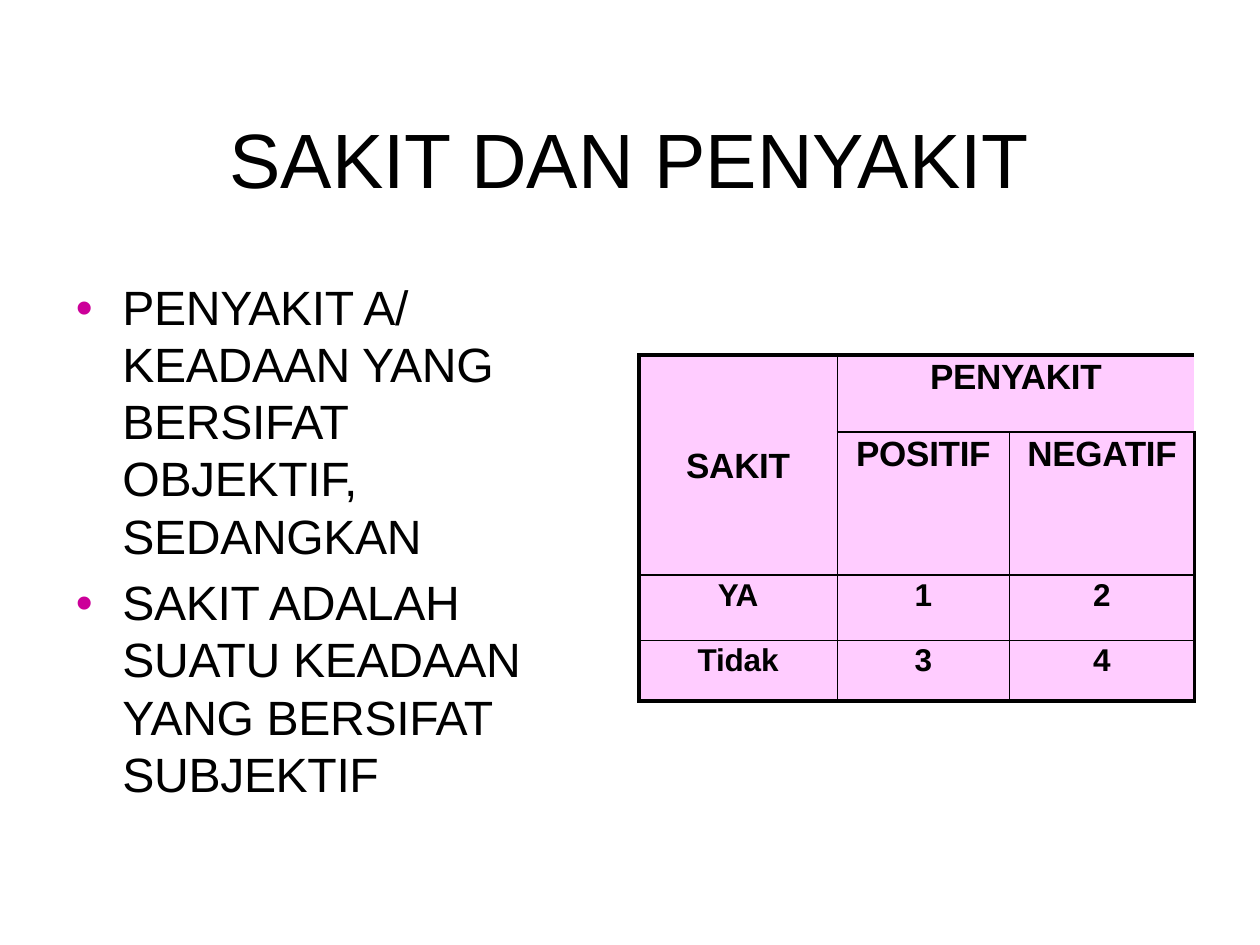
from lxml.etree import SubElement
from pptx import Presentation
from pptx.dml.color import RGBColor
from pptx.enum.text import MSO_ANCHOR as ANCHOR, PP_ALIGN as ALIGN
from pptx.oxml import parse_xml
from pptx.oxml.ns import nsdecls, qn
from pptx.util import Cm, Pt

BLACK = RGBColor(0x00, 0x00, 0x00)
PINK = RGBColor(0xFF, 0xCC, 0xFF)
MAGENTA = RGBColor(0xCC, 0x00, 0x99)
FONT = "Arial"
THIN, THICK = 1, 2.25


def write(p, text, size, bold=False, align=ALIGN.LEFT, before=0, line=None, spacing=0):
    p.alignment = align
    p.space_before = Pt(before)
    p.line_spacing = line
    r = p.add_run()
    r.text = text
    r.font.name = FONT
    r.font.size = Pt(size)
    r.font.bold = bold
    r.font.color.rgb = BLACK
    r._r.get_or_add_rPr().set("spc", str(round(spacing * 100)))


def set_insets(target, top, right=0):
    target.margin_left = target.margin_bottom = 0
    target.margin_top, target.margin_right = Cm(top), Cm(right)
    target.vertical_anchor = ANCHOR.TOP


def add_bullet(p, char, color, indent):
    pPr = p._p.get_or_add_pPr()
    pPr.set("marL", str(Cm(indent)))
    pPr.set("indent", str(-Cm(indent - 0.03)))
    clr = SubElement(pPr, qn("a:buClr"))
    SubElement(clr, qn("a:srgbClr")).set("val", str(color))
    SubElement(pPr, qn("a:buFont")).set("typeface", FONT)
    SubElement(pPr, qn("a:buChar")).set("char", char)


def set_borders(cell, **widths):
    tcPr = cell._tc.get_or_add_tcPr()
    for i, side in enumerate("LRTB"):
        width = widths[side]
        paint = f'<a:solidFill><a:srgbClr val="{BLACK}"/></a:solidFill>' if width else "<a:noFill/>"
        tcPr.insert(i, parse_xml(f'<a:ln{side} {nsdecls("a")} w="{Pt(width)}">{paint}</a:ln{side}>'))


def place_title(s, text, left, top, width, height):
    sp = s.shapes.title
    sp.left, sp.top, sp.width, sp.height = Cm(left), Cm(top), Cm(width), Cm(height)
    set_insets(sp.text_frame, 0.03)
    write(sp.text_frame.paragraphs[0], text, 44, align=ALIGN.CENTER, spacing=-0.1)


def add_definitions(s, items, left, top, width, height):
    tf = s.shapes.add_textbox(Cm(left), Cm(top), Cm(width), Cm(height)).text_frame
    tf.word_wrap = True
    set_insets(tf, 0.05, right=1)
    for i, text in enumerate(items):
        p = tf.add_paragraph() if i else tf.paragraphs[0]
        write(p, text, 27.5, before=5.5 if i else 1.1, line=0.99, spacing=-0.2)
        add_bullet(p, "•", MAGENTA, 0.97)


def add_illness_table(s, rows, left, top, width, height):
    col_shares, row_shares = (0.357, 0.31, 0.333), (0.222, 0.414, 0.189, 0.175)
    last_row, last_col = len(rows) - 1, len(rows[0]) - 1
    table = s.shapes.add_table(len(rows), len(rows[0]), Cm(left), Cm(top), Cm(width), Cm(height)).table
    table.first_row = table.horz_banding = False
    for col, share in zip(table.columns, col_shares):
        col.width = Cm(width * share)
    for row, share in zip(table.rows, row_shares):
        row.height = Cm(height * share)
    table.cell(0, 0).merge(table.cell(1, 0))
    table.cell(0, 1).merge(table.cell(0, 2))

    for r, texts in enumerate(rows):
        for c, text in enumerate(texts):
            cell = table.cell(r, c)
            cell.fill.solid()
            cell.fill.fore_color.rgb = PINK
            right = THICK if c == last_col else THIN
            set_borders(
                cell,
                L=THIN if c else THICK,
                R=0 if r == 0 and c else right,
                T=THIN if r else THICK,
                B=THICK if r == last_row else THIN,
            )
            if cell.is_spanned:
                continue
            is_header = r < 2
            set_insets(cell, 0.05)
            if is_header and c == 0:
                cell.vertical_anchor = ANCHOR.MIDDLE
            write(cell.text_frame.paragraphs[0], text, 20 if is_header else 18, bold=True,
                  align=ALIGN.CENTER, before=1.8, spacing=-0.2 if is_header else -0.1)


def main():
    prs = Presentation()
    prs.slide_width, prs.slide_height = Cm(25.4), Cm(19.05)
    s = prs.slides.add_slide(prs.slide_layouts[5])
    place_title(s, "SAKIT DAN PENYAKIT", 4.57, 2.21, 16.23, 1.93)
    add_definitions(s, [
        "PENYAKIT A/ KEADAAN YANG BERSIFAT OBJEKTIF, SEDANGKAN",
        "SAKIT ADALAH SUATU KEADAAN YANG BERSIFAT SUBJEKTIF",
    ], 1.5, 5.59, 10.62, 9.53)
    add_illness_table(s, [
        ["SAKIT", "PENYAKIT", ""],
        ["", "POSITIF", "NEGATIF"],
        ["YA", "1", "2"],
        ["Tidak", "3", "4"],
    ], 12.88, 7.16, 11.2, 6.97)
    prs.save("out.pptx")


if __name__ == "__main__":
    main()
